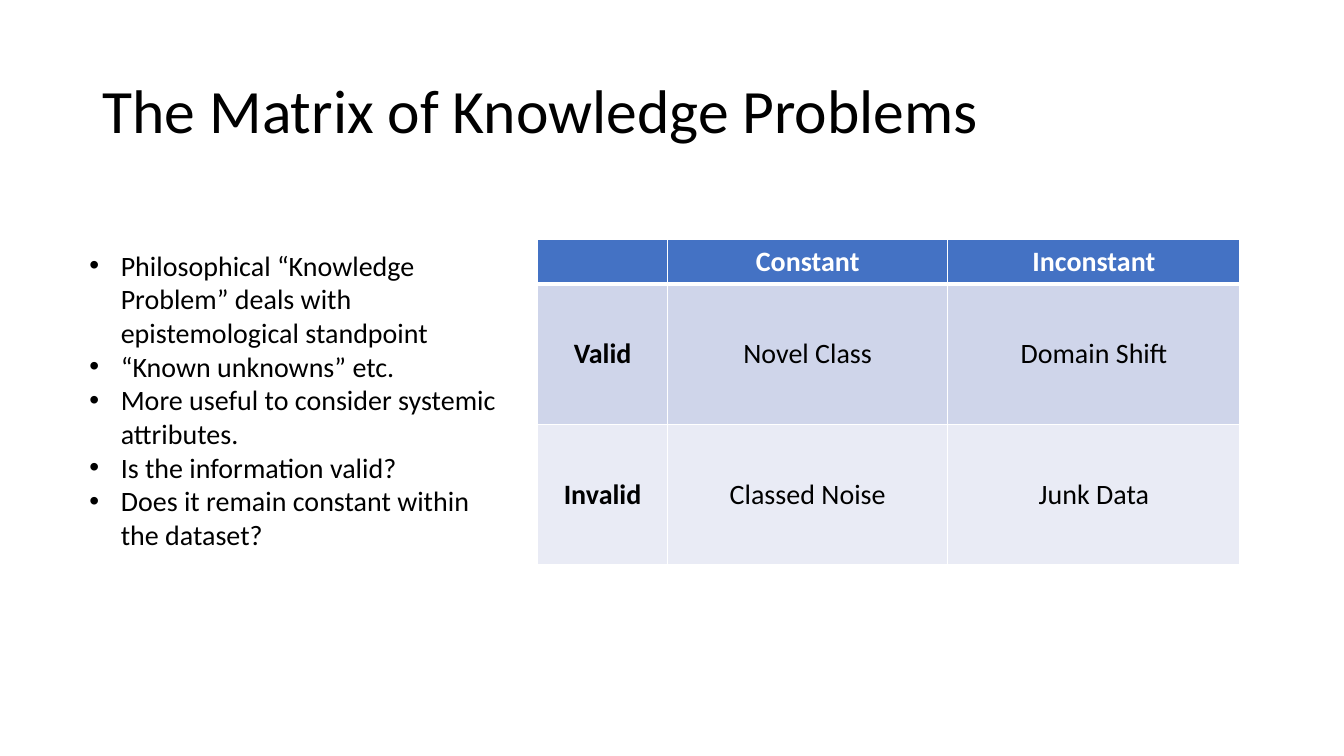
from lxml import etree
from pptx import Presentation
from pptx.dml.color import RGBColor
from pptx.enum.text import MSO_ANCHOR, MSO_AUTO_SIZE, PP_ALIGN
from pptx.oxml.ns import qn
from pptx.util import Cm, Pt

BLACK = RGBColor(0x00, 0x00, 0x00)
WHITE = RGBColor(0xFF, 0xFF, 0xFF)
HEADER_BLUE = RGBColor(0x44, 0x72, 0xC4)
VALID_BLUE = RGBColor(0xCF, 0xD5, 0xEA)
INVALID_BLUE = RGBColor(0xE9, 0xEB, 0xF5)
LEFT, CENTER = PP_ALIGN.LEFT, PP_ALIGN.CENTER
TOP, MIDDLE = MSO_ANCHOR.TOP, MSO_ANCHOR.MIDDLE
NO_AUTOFIT = MSO_AUTO_SIZE.NONE
FONT = "Calibri"

TITLE = "The Matrix of Knowledge Problems"
POINTS = [
    "Philosophical “Knowledge Problem” deals with epistemological standpoint",
    "“Known unknowns” etc.",
    "More useful to consider systemic attributes.",
    "Is the information valid?",
    "Does it remain constant within the dataset?",
]
MATRIX = [
    ["", "Constant", "Inconstant"],
    ["Valid", "Novel Class", "Domain Shift"],
    ["Invalid", "Classed Noise", "Junk Data"],
]
ROW_FILLS = [HEADER_BLUE, VALID_BLUE, INVALID_BLUE]
COLUMN_SHARES = [0.185, 0.399, 0.416]
HEADER_HEIGHT = Cm(1.1)


def write_text(paragraph, text, size=20, color=BLACK, bold=False, align=LEFT, spacing=1.0):
    """Put formatted text into a paragraph."""
    paragraph.alignment = align
    paragraph.line_spacing = spacing
    paragraph.space_before = Pt(0)
    run = paragraph.add_run()
    run.text = text
    run.font.name = FONT
    run.font.size = Pt(size)
    run.font.bold = bold
    run.font.color.rgb = color


def place(shape, box, anchor):
    """Move a placeholder to a box and set up its text frame."""
    shape.left, shape.top, shape.width, shape.height = box
    frame = shape.text_frame
    frame.word_wrap = True
    frame.auto_size = NO_AUTOFIT
    frame.vertical_anchor = anchor
    return frame


def add_title(slide, box):
    """Fill the title placeholder."""
    frame = place(slide.shapes.title, box, MIDDLE)
    write_text(frame.paragraphs[0], TITLE, size=44, spacing=0.9)


def add_points(slide, box):
    """Fill the body placeholder with the bulleted points."""
    frame = place(slide.placeholders[1], box, TOP)
    for index, point in enumerate(POINTS):
        paragraph = frame.add_paragraph() if index else frame.paragraphs[0]
        write_text(paragraph, point)
        properties = paragraph._p.get_or_add_pPr()
        properties.set("marL", str(Cm(0.79)))
        properties.set("indent", str(-Cm(0.79)))


def add_borders(cell, top, bottom):
    """Draw white borders round a cell, with top and bottom widths in points."""
    properties = cell._tc.get_or_add_tcPr()
    widths = {"a:lnL": 1, "a:lnR": 1, "a:lnT": top, "a:lnB": bottom}
    for position, (tag, width) in enumerate(widths.items()):
        line = etree.Element(qn(tag), w=str(Pt(width)))
        fill = etree.SubElement(line, qn("a:solidFill"))
        etree.SubElement(fill, qn("a:srgbClr"), val=str(WHITE))
        properties.insert(position, line)


def add_matrix(slide, box):
    """Build the validity and constancy table in a box."""
    left, top, width, height = box
    table = slide.shapes.add_table(len(MATRIX), len(MATRIX[0]), *box).table
    for column, share in zip(table.columns, COLUMN_SHARES):
        column.width = int(width * share)
    body_height = (height - HEADER_HEIGHT) // (len(MATRIX) - 1)
    for row_index, labels in enumerate(MATRIX):
        is_header = row_index == 0
        table.rows[row_index].height = HEADER_HEIGHT if is_header else body_height
        for column_index, label in enumerate(labels):
            cell = table.cell(row_index, column_index)
            cell.vertical_anchor = MIDDLE
            cell.fill.solid()
            cell.fill.fore_color.rgb = ROW_FILLS[row_index]
            add_borders(cell, top=3 if row_index == 1 else 1, bottom=3 if is_header else 1)
            write_text(
                cell.text_frame.paragraphs[0],
                label,
                color=WHITE if is_header else BLACK,
                bold=is_header or column_index == 0,
                align=CENTER,
            )


def main():
    """Build and save the presentation."""
    presentation = Presentation()
    presentation.slide_width = Cm(33.87)
    presentation.slide_height = Cm(19.05)
    slide = presentation.slides.add_slide(presentation.slide_layouts[1])
    add_title(slide, (Cm(2.33), Cm(1.01), Cm(29.21), Cm(3.68)))
    add_matrix(slide, (Cm(13.55), Cm(6.03), Cm(17.7), Cm(8.18)))
    add_points(slide, (Cm(2), Cm(6.13), Cm(10.82), Cm(7.95)))
    presentation.save("out.pptx")


if __name__ == "__main__":
    main()
